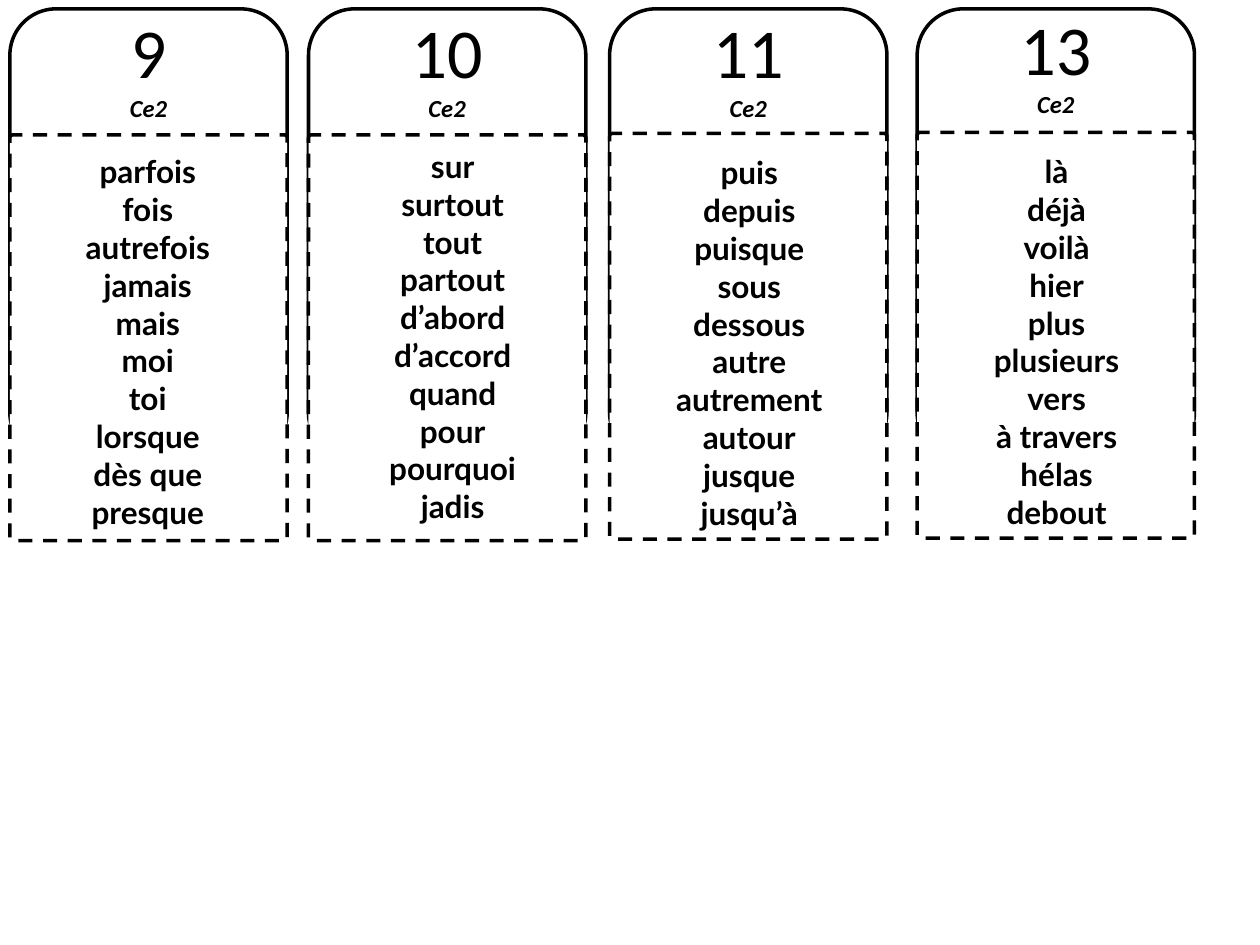
from dataclasses import dataclass

from pptx import Presentation
from pptx.dml.color import RGBColor
from pptx.enum import dml, shapes, text
from pptx.util import Cm, Pt


@dataclass(frozen=True)
class Theme:
    ink: RGBColor = RGBColor(0, 0, 0)
    paper: RGBColor = RGBColor(255, 255, 255)
    heading_font: str = "Calibri"
    word_font: str = "Lato"
    number_size: float = 40
    level_size: float = 14
    word_size: float = 18
    line_width: float = 2


@dataclass(frozen=True)
class Card:
    """A numbered word card; lengths are in centimetres."""
    number: str
    left: float
    panel_top: float
    words_left: float
    words_top: float
    words_width: float
    words: tuple[str, ...]
    heading_bottom_margin: float = 6.78


THEME = Theme()
LEVEL = "Ce2"
CARD_TOP, CARD_WIDTH, CARD_HEIGHT = 0.18, 5.59, 9.07
PANEL_HEIGHT, WORDS_HEIGHT = 8.18, 7.95

CARDS = (
    Card("9", 0.2, 2.72, 0.81, 2.95, 4.34,
         ("parfois", "fois", "autrefois", "jamais", "mais",
          "moi", "toi", "lorsque", "dès que", "presque")),
    Card("10", 6.22, 2.72, 6.65, 2.84, 4.95,
         ("sur", "surtout", "tout", "partout", "d’abord",
          "d’accord", "quand", "pour", "pourquoi", "jadis")),
    Card("11", 12.29, 2.69, 12.83, 2.97, 4.55,
         ("puis", "depuis", "puisque", "sous", "dessous",
          "autre", "autrement", "autour", "jusque", "jusqu’à")),
    Card("13", 18.49, 2.67, 18.67, 2.95, 5.26,
         ("là", "déjà", "voilà", "hier", "plus",
          "plusieurs", "vers", "à travers", "hélas", "debout"),
         heading_bottom_margin=6.93),
)


def add_line(frame, index: int, content: str, font: str, size: float,
             bold: bool = False, italic: bool = False) -> None:
    """Write one centred paragraph, using the frame's first one at index 0."""
    paragraph = frame.add_paragraph() if index else frame.paragraphs[0]
    paragraph.alignment = text.PP_ALIGN.CENTER
    run = paragraph.add_run()
    run.text = content
    run.font.name = font
    run.font.size = Pt(size)
    run.font.bold = bold
    run.font.italic = italic
    run.font.color.rgb = THEME.ink


def add_rounded_box(slide, left: float, top: float, height: float):
    shape = slide.shapes.add_shape(
        shapes.MSO_SHAPE.ROUNDED_RECTANGLE,
        Cm(left), Cm(top), Cm(CARD_WIDTH), Cm(height))
    shape.shadow.inherit = False
    shape.fill.background()
    shape.line.color.rgb = THEME.ink
    shape.line.width = Pt(THEME.line_width)
    return shape


def add_card(slide, card: Card) -> None:
    """Draw the card with its heading, then the dashed panel over it."""
    body = add_rounded_box(slide, card.left, CARD_TOP, CARD_HEIGHT)
    frame = body.text_frame
    frame.word_wrap = True
    frame.vertical_anchor = text.MSO_ANCHOR.MIDDLE
    frame.margin_top = 0
    frame.margin_bottom = Cm(card.heading_bottom_margin)
    add_line(frame, 0, card.number, THEME.heading_font, THEME.number_size)
    add_line(frame, 1, LEVEL, THEME.heading_font, THEME.level_size,
             bold=True, italic=True)

    panel = add_rounded_box(slide, card.left, card.panel_top, PANEL_HEIGHT)
    panel.adjustments[0] = 0.01
    panel.fill.solid()
    panel.fill.fore_color.rgb = THEME.paper
    panel.line.dash_style = dml.MSO_LINE.DASH


def add_words(slide, card: Card) -> None:
    box = slide.shapes.add_textbox(
        Cm(card.words_left), Cm(card.words_top),
        Cm(card.words_width), Cm(WORDS_HEIGHT))
    frame = box.text_frame
    frame.word_wrap = True
    frame.auto_size = text.MSO_AUTO_SIZE.SHAPE_TO_FIT_TEXT
    for index, word in enumerate(card.words):
        add_line(frame, index, word, THEME.word_font, THEME.word_size, bold=True)


def main() -> None:
    presentation = Presentation()
    presentation.slide_width = Cm(25.4)
    presentation.slide_height = Cm(19.05)
    slide = presentation.slides.add_slide(presentation.slide_layouts[6])
    for card in CARDS:
        add_card(slide, card)
    for card in CARDS:
        add_words(slide, card)
    presentation.save("out.pptx")


if __name__ == "__main__":
    main()
